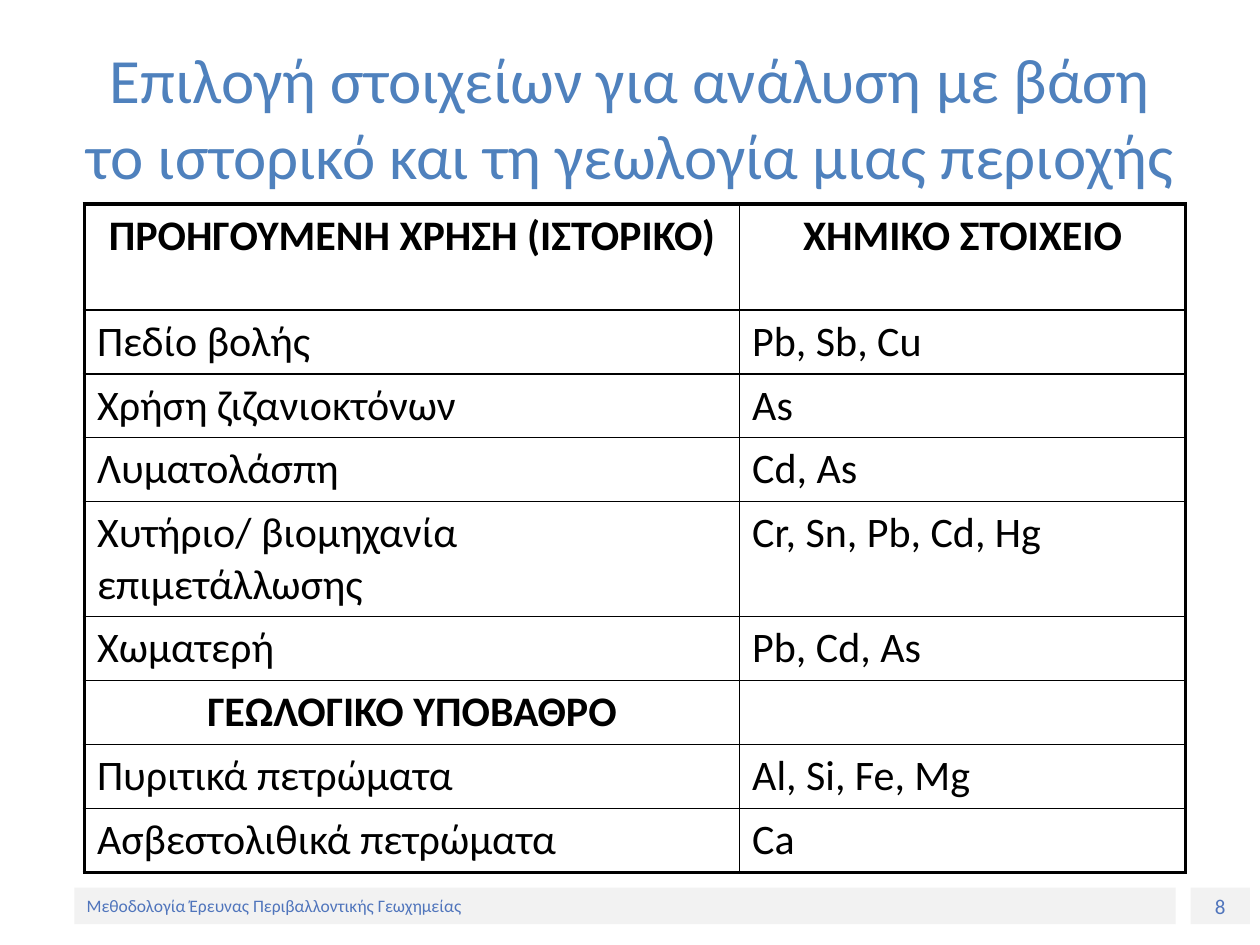
from pptx import Presentation
from pptx.dml.color import RGBColor
from pptx.enum.shapes import MSO_SHAPE
from pptx.enum.text import MSO_ANCHOR, PP_ALIGN
from pptx.oxml.ns import qn
from pptx.util import Inches, Pt
from lxml import etree

LEFT, CENTER = PP_ALIGN.LEFT, PP_ALIGN.CENTER
MIDDLE = MSO_ANCHOR.MIDDLE
RECT = MSO_SHAPE.RECTANGLE

BLACK = RGBColor(0x00, 0x00, 0x00)
TITLE_BLUE = RGBColor(0x4F, 0x81, 0xBD)
FOOTER_BLUE = RGBColor(0x50, 0x75, 0xBC)
PALE_GREY = RGBColor(0xF2, 0xF2, 0xF2)

# The slide is a grid of 100 columns by 75 rows
COLUMNS, ROWS = 100, 75
TITLE_ONLY = 5
THIN, THICK = 1, 2.25

# (use or bedrock, elements, is heading, row height)
TABLE_ROWS = [
    ("ΠΡΟΗΓΟΥΜΕΝΗ ΧΡΗΣΗ (ΙΣΤΟΡΙΚΟ)", "ΧΗΜΙΚΟ ΣΤΟΙΧΕΙΟ", True, 8.4),
    ("Πεδίο βολής", "Pb, Sb, Cu", False, 4.7),
    ("Χρήση ζιζανιοκτόνων", "As", False, 4.7),
    ("Λυματολάσπη", "Cd, As", False, 4.7),
    ("Χυτήριο/ βιομηχανία επιμετάλλωσης", "Cr, Sn, Pb, Cd, Hg", False, 8.4),
    ("Χωματερή", "Pb, Cd, As", False, 4.7),
    ("ΓΕΩΛΟΓΙΚΟ ΥΠΟΒΑΘΡΟ", "", True, 4.7),
    ("Πυριτικά πετρώματα", "Al, Si, Fe, Mg", False, 4.7),
    ("Ασβεστολιθικά πετρώματα", "Ca", False, 4.7),
]


class SlideBuilder:
    font = "Calibri"

    def __init__(self, prs):
        self.slide = prs.slides.add_slide(prs.slide_layouts[TITLE_ONLY])
        self.col = prs.slide_width / COLUMNS
        self.row = prs.slide_height / ROWS

    def box(self, x, y, w, h):
        return (round(x * self.col), round(y * self.row),
                round(w * self.col), round(h * self.row))

    def set_text(self, tf, text, size, color, align=LEFT, bold=False):
        p = tf.paragraphs[0]
        p.text = text
        p.alignment = align
        p.font.name = self.font
        p.font.size = Pt(size)
        p.font.bold = bold
        p.font.color.rgb = color

    def title(self, text, x, y, w, h):
        sp = self.slide.shapes.title
        sp.left, sp.top, sp.width, sp.height = self.box(x, y, w, h)
        sp.text_frame.vertical_anchor = MIDDLE
        self.set_text(sp.text_frame, text, 36, TITLE_BLUE, CENTER)

    def footer_bar(self, text, x, y, w, h, size, align):
        sp = self.slide.shapes.add_shape(RECT, *self.box(x, y, w, h))
        sp.shadow.inherit = False
        sp.fill.solid()
        sp.fill.fore_color.rgb = PALE_GREY
        sp.line.fill.background()
        sp.text_frame.vertical_anchor = MIDDLE
        self.set_text(sp.text_frame, text, size, FOOTER_BLUE, align)

    def borders(self, cell, widths):
        tc_pr = cell._tc.get_or_add_tcPr()
        for side, width in widths.items():
            ln = etree.SubElement(tc_pr, qn(f"a:ln{side}"), w=str(Pt(width)))
            fill = etree.SubElement(ln, qn("a:solidFill"))
            etree.SubElement(fill, qn("a:srgbClr"), val=str(BLACK))

    def table(self, rows, x, y, widths):
        height = sum(row[-1] for row in rows)
        table = self.slide.shapes.add_table(
            len(rows), len(widths), *self.box(x, y, sum(widths), height)).table
        table.first_row = table.horz_banding = False
        for column, width in zip(table.columns, widths):
            column.width = round(width * self.col)
        last_row, last_col = len(rows) - 1, len(widths) - 1
        for i, (*texts, heading, row_height) in enumerate(rows):
            table.rows[i].height = round(row_height * self.row)
            for j, text in enumerate(texts):
                cell = table.cell(i, j)
                self.set_text(cell.text_frame, text, 24, BLACK,
                              CENTER if heading else LEFT, heading)
                # Thick frame outside, thin rules inside
                self.borders(cell, {
                    "L": THICK if j == 0 else THIN,
                    "R": THICK if j == last_col else THIN,
                    "T": THICK if i == 0 else THIN,
                    "B": THICK if i == last_row else THIN,
                })
                cell.fill.background()


def main():
    prs = Presentation()
    prs.slide_width, prs.slide_height = Inches(10), Inches(7.5)
    s = SlideBuilder(prs)

    # Footer with slide number
    s.footer_bar("8", 94.5, 70.45, 4.7, 2.9, 12, CENTER)
    s.footer_bar("Μεθοδολογία Έρευνας Περιβαλλοντικής Γεωχημείας",
                 5.9, 70.45, 87.4, 2.9, 10, LEFT)

    # Title and table
    s.title("Επιλογή στοιχείων για ανάλυση με βάση το ιστορικό "
            "και τη γεωλογία μιας περιοχής", 5, 3, 90, 12.5)
    s.table(TABLE_ROWS, 6.7, 16.2, (52, 35.4))

    prs.save("out.pptx")


if __name__ == "__main__":
    main()
